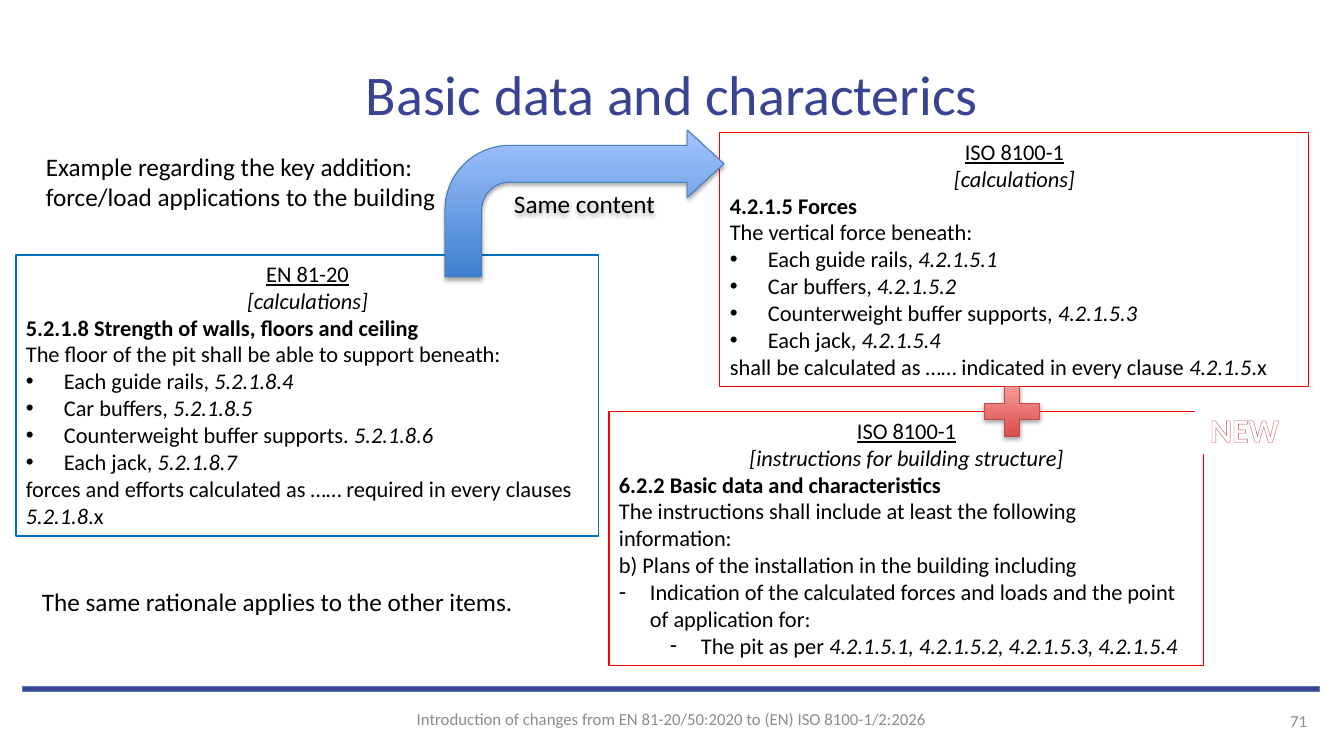
from lxml import etree
from pptx import Presentation
from pptx import util as u
from pptx.dml.color import RGBColor
from pptx.enum import shapes, text
from pptx.oxml.ns import qn

BLACK = RGBColor(0x00, 0x00, 0x00)
WHITE = RGBColor(0xFF, 0xFF, 0xFF)
GREY = RGBColor(0x8C, 0x8C, 0x8C)
NAVY = RGBColor(0x39, 0x43, 0x93)
RULE_EDGE = RGBColor(0x4F, 0x81, 0xBD)
BLUE = RGBColor(0x00, 0x70, 0xC0)
RED = RGBColor(0xFF, 0x00, 0x00)
BRICK = RGBColor(0xC0, 0x50, 0x4D)
PLUS_COLOURS = RGBColor(0xD1, 0x40, 0x3C), RGBColor(0xFF, 0xA6, 0xA5)
PLUS_EDGE = RGBColor(0xBF, 0x4C, 0x48)
ARROW_COLOURS = RGBColor(0x3F, 0x80, 0xCE), RGBColor(0xA4, 0xC4, 0xFF)
ARROW_EDGE = RGBColor(0x4B, 0x7E, 0xBC)

LEFT, CENTER, RIGHT = text.PP_ALIGN.LEFT, text.PP_ALIGN.CENTER, text.PP_ALIGN.RIGHT
TOP, MIDDLE = text.MSO_ANCHOR.TOP, text.MSO_ANCHOR.MIDDLE
KIND = shapes.MSO_SHAPE
PX = 914400 / 100.8


def px(length):
    return round(length * PX)


class SlideBuilder:
    font_name = "Calibri"

    def __init__(self, page):
        self.page = page

    def style(self, paragraph, size, color, align):
        paragraph.alignment = align
        font = paragraph.font
        font.name = self.font_name
        font.size = u.Pt(size)
        font.color.rgb = color
        return font

    def prepare(self, box, anchor):
        frame = box.text_frame
        frame.word_wrap = True
        frame.vertical_anchor = anchor
        return frame

    def caption(self, box, words, size, color=BLACK, align=LEFT, anchor=TOP):
        paragraph = self.prepare(box, anchor).paragraphs[0]
        span = paragraph.add_run()
        span.text = words
        self.style(paragraph, size, color, align)
        return span

    def label(self, bounds, words, size, color=BLACK, align=LEFT, anchor=TOP):
        box = self.page.shapes.add_textbox(*map(px, bounds))
        self.caption(box, words, size, color, align, anchor)

    def shape(self, kind, bounds, fill=None, edge=None):
        box = self.page.shapes.add_shape(kind, *map(px, bounds))
        box.shadow.inherit = False
        if fill is None:
            box.fill.background()
        else:
            box.fill.solid()
            box.fill.fore_color.rgb = fill
        if edge is None:
            box.line.fill.background()
        else:
            box.line.color.rgb = edge
            box.line.width = u.Pt(0.75)
        return box

    def glossy(self, kind, bounds, colours, edge):
        box = self.shape(kind, bounds, edge=edge)
        box.fill.gradient()
        box.fill.gradient_angle = 90
        for position, (stop, colour) in enumerate(zip(box.fill.gradient_stops, colours)):
            stop.position = position
            stop.color.rgb = colour
        effects = box._element.spPr.find(qn("a:effectLst"))
        shadow = etree.SubElement(effects, qn("a:outerShdw"), blurRad="40000",
                                  dist="23000", dir="5400000", rotWithShape="0")
        black = etree.SubElement(shadow, qn("a:srgbClr"), val="000000")
        etree.SubElement(black, qn("a:alpha"), val="35000")
        return box

    def bullet(self, paragraph, mark, margin, hanging):
        properties = paragraph._p.get_or_add_pPr()
        properties.set("marL", str(px(margin)))
        properties.set("indent", str(-px(hanging)))
        etree.SubElement(properties, qn("a:buFont"), typeface="Arial")
        etree.SubElement(properties, qn("a:buChar"), char=mark)

    def clause(self, bounds, edge, standard, topic, heading, lines, fill=None):
        frame = self.prepare(self.shape(KIND.RECTANGLE, bounds, fill, edge), TOP)
        rows = [("title", standard), ("topic", f"*{topic}*"), ("heading", heading), *lines]
        for index, (role, words) in enumerate(rows):
            paragraph = frame.add_paragraph() if index else frame.paragraphs[0]
            if role == "dot":
                self.bullet(paragraph, "•", 38, 38)
            elif role == "dash":
                self.bullet(paragraph, "-", 31, 31)
            elif role == "subdash":
                paragraph.level = 1
                self.bullet(paragraph, "-", 82, 31)
            for part, piece in enumerate(words.split("*")):
                if piece:
                    span = paragraph.add_run()
                    span.text = piece
                    if part % 2:
                        span.font.italic = True
            align = CENTER if role in ("title", "topic") else LEFT
            font = self.style(paragraph, 16, BLACK, align)
            if role == "title":
                font.underline = True
            elif role == "heading":
                font.bold = True

    def outlined(self, bounds, words):
        box = self.shape(KIND.RECTANGLE, bounds, WHITE)
        span = self.caption(box, words, 24, WHITE, CENTER)
        span.font.bold = True
        outline = etree.Element(qn("a:ln"), w=str(u.Pt(0.52)))
        fill = etree.SubElement(outline, qn("a:solidFill"))
        etree.SubElement(fill, qn("a:srgbClr"), val=str(BRICK))
        span._r.get_or_add_rPr().insert(0, outline)


def main():
    deck = Presentation()
    deck.slide_width, deck.slide_height = px(1344), px(756)
    slide = SlideBuilder(deck.slides.add_slide(deck.slide_layouts[6]))

    slide.label((299, 699, 745, 40),
                "Introduction of changes from EN 81-20/50:2020 to (EN) ISO 8100-1/2:2026",
                12, GREY, CENTER, MIDDLE)
    slide.label((1070, 701, 247, 40), "71", 12, GREY, RIGHT, MIDDLE)
    slide.shape(KIND.RECTANGLE, (23, 687, 1297, 5), NAVY, RULE_EDGE)

    slide.clause((16, 255, 583, 281), BLUE, "EN 81-20", "[calculations]",
                 "5.2.1.8 Strength of walls, floors and ceiling", [
        ("body", "The floor of the pit shall be able to support beneath:"),
        ("dot", "Each guide rails, *5.2.1.8.4*"),
        ("dot", "Car buffers, *5.2.1.8.5*"),
        ("dot", "Counterweight buffer supports. *5.2.1.8.6*"),
        ("dot", "Each jack, *5.2.1.8.7*"),
        ("body", "forces and efforts calculated as …… required in every clauses *5.2.1.8*.x"),
    ])
    slide.clause((720, 133, 589, 254), RED, "ISO 8100-1", "[calculations]",
                 "4.2.1.5 Forces", [
        ("body", "The vertical force beneath:"),
        ("dot", "Each guide rails, *4.2.1.5.1*"),
        ("dot", "Car buffers, *4.2.1.5.2*"),
        ("dot", "Counterweight buffer supports, *4.2.1.5.3*"),
        ("dot", "Each jack, *4.2.1.5.4*"),
        ("body", "shall be calculated as …… indicated in every clause *4.2.1.5*.x"),
    ])
    slide.clause((609, 412, 595, 254), RED, "ISO 8100-1",
                 "[instructions for building structure]",
                 "6.2.2 Basic data and characteristics", [
        ("body", "The instructions shall include at least the following information:"),
        ("body", "b) Plans of the installation in the building including"),
        ("dash", "Indication of the calculated forces and loads and the point of application for:"),
        ("subdash", "The pit as per *4.2.1.5.1, 4.2.1.5.2, 4.2.1.5.3, 4.2.1.5.4*"),
    ], WHITE)

    slide.glossy(KIND.MATH_PLUS, (975, 378, 74, 67), PLUS_COLOURS, PLUS_EDGE)
    slide.label((32, 581, 545, 40), "The same rationale applies to the other items.", 18)
    slide.label((36, 146, 413, 72),
                "Example regarding the key addition: force/load applications to the building", 18)
    arrow = slide.glossy(KIND.BENT_ARROW, (445, 130, 279, 147), ARROW_COLOURS, ARROW_EDGE)
    for index, value in enumerate((0.25, 0.23, 0.25, 0.44)):
        arrow.adjustments[index] = value
    slide.caption(arrow, "Same content", 18, BLACK, CENTER, MIDDLE)
    slide.outlined((1195, 404, 99, 50), "NEW")
    slide.label((67, 30, 1210, 126), "Basic data and characterics", 40, NAVY, CENTER, MIDDLE)

    deck.save("out.pptx")


if __name__ == "__main__":
    main()
